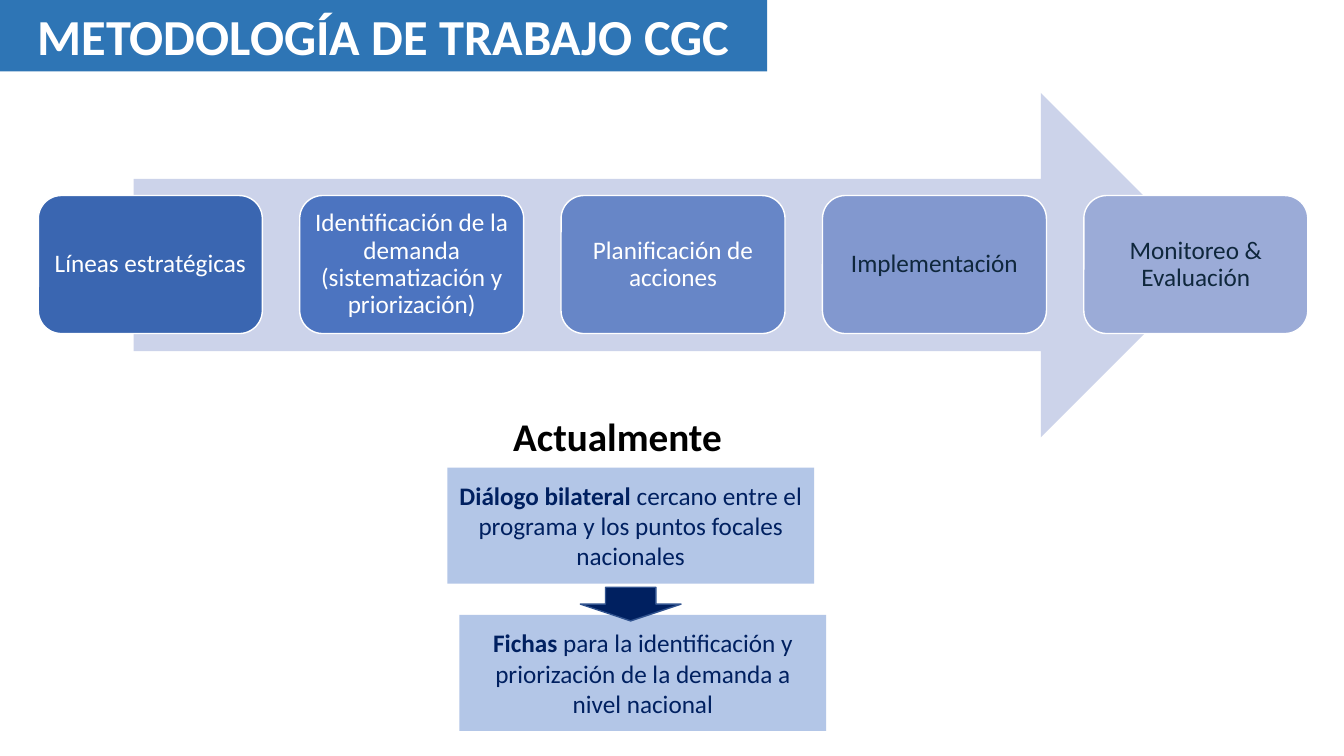
from dataclasses import dataclass

from pptx import Presentation
from pptx.dml.color import RGBColor
from pptx.enum.shapes import MSO_SHAPE
from pptx.enum.text import MSO_ANCHOR, MSO_AUTO_SIZE, PP_ALIGN
from pptx.util import Pt

RECTANGLE = MSO_SHAPE.RECTANGLE
ROUNDED = MSO_SHAPE.ROUNDED_RECTANGLE
RIGHT_ARROW = MSO_SHAPE.RIGHT_ARROW
DOWN_ARROW = MSO_SHAPE.DOWN_ARROW
TOP = MSO_ANCHOR.TOP
MIDDLE = MSO_ANCHOR.MIDDLE
NO_AUTOFIT = MSO_AUTO_SIZE.NONE
CENTER = PP_ALIGN.CENTER

TITLE_ONLY = 5
FONT = "Calibri"
COLORS = {
    "banner": "2E75B5",
    "process": "CCD3EA",
    "strategy": "3A66B1",
    "demand": "4C74C0",
    "planning": "6786C7",
    "implementation": "8298CF",
    "monitoring": "9BABD7",
    "note": "B3C6E7",
    "navy": "002060",
    "navy_edge": "31538F",
    "white": "FFFFFF",
    "black": "000000",
    "dark": "0F273C",
}


@dataclass(frozen=True)
class Box:
    left: float
    top: float
    width: float
    height: float

    def lengths(self) -> list:
        return [Pt(v) for v in (self.left, self.top, self.width, self.height)]


@dataclass(frozen=True)
class Stage:
    text: str
    fill: str
    ink: str


@dataclass(frozen=True)
class Note:
    box: Box
    lead: str
    rest: str


STAGES = [
    Stage("Líneas estratégicas", "strategy", "white"),
    Stage("Identificación de la demanda (sistematización y priorización)", "demand", "white"),
    Stage("Planificación de acciones", "planning", "white"),
    Stage("Implementación", "implementation", "dark"),
    Stage("Monitoreo & Evaluación", "monitoring", "dark"),
]
FIRST_STAGE = Box(27.4, 139.7, 160, 98.6)
STAGE_PITCH = 186.7

NOTES = [
    Note(Box(319.5, 334, 262, 83), "Diálogo bilateral ",
         "cercano entre el programa y los puntos focales nacionales"),
    Note(Box(328.2, 439.2, 262, 83), "Fichas",
         " para la identificación y priorización de la demanda a nivel nacional"),
]


def rgb(color: str) -> RGBColor:
    return RGBColor.from_string(COLORS[color])


def paint(shape, fill: str, edge: str = "") -> None:
    shape.fill.solid()
    shape.fill.fore_color.rgb = rgb(fill)
    if edge:
        shape.line.color.rgb = rgb(edge)
        shape.line.width = Pt(1)
    else:
        shape.line.fill.background()


def add_figure(slide, kind, box: Box, fill: str, edge: str = ""):
    figure = slide.shapes.add_shape(kind, *box.lengths())
    figure.shadow.inherit = False
    paint(figure, fill, edge)
    return figure


def write(shape, runs: list[tuple[str, bool]], size: float, ink: str,
          anchor=MIDDLE, spacing: float = 1.0, inset: tuple[float, float] = (7.2, 3.6)) -> None:
    frame = shape.text_frame
    side, edge = map(Pt, inset)
    frame_format = {
        "word_wrap": True, "auto_size": NO_AUTOFIT, "vertical_anchor": anchor,
        "margin_left": side, "margin_right": side,
        "margin_top": edge, "margin_bottom": edge,
    }
    for name, value in frame_format.items():
        setattr(frame, name, value)
    paragraph = frame.paragraphs[0]
    paragraph.alignment = CENTER
    paragraph.line_spacing = spacing
    for text, bold in runs:
        run = paragraph.add_run()
        run.text = text
        for name, value in {"name": FONT, "size": Pt(size), "bold": bold}.items():
            setattr(run.font, name, value)
        run.font.color.rgb = rgb(ink)


def place_title(slide) -> None:
    title = slide.shapes.title
    position = zip(("left", "top", "width", "height"), Box(0, 0, 548, 51).lengths())
    for name, value in position:
        setattr(title, name, value)
    paint(title, "banner")
    write(title, [("METODOLOGÍA DE TRABAJO CGC", True)], 36, "white", TOP)


def draw_process(slide) -> None:
    add_figure(slide, RIGHT_ARROW, Box(95.4, 66.4, 771, 246), "process")
    for index, stage in enumerate(STAGES):
        box = Box(FIRST_STAGE.left + index * STAGE_PITCH, FIRST_STAGE.top,
                  FIRST_STAGE.width, FIRST_STAGE.height)
        step = add_figure(slide, ROUNDED, box, stage.fill, "white")
        write(step, [(stage.text, False)], 18, stage.ink, spacing=0.9, inset=(5, 5))


def draw_current_practice(slide) -> None:
    heading = slide.shapes.add_textbox(*Box(334.6, 291, 213, 41).lengths())
    write(heading, [("Actualmente", True)], 28, "black", TOP)
    for note in NOTES:
        panel = add_figure(slide, RECTANGLE, note.box, "note")
        write(panel, [(note.lead, True), (note.rest, False)], 18, "navy")
    add_figure(slide, DOWN_ARROW, Box(414.5, 419.5, 72, 24), "navy", "navy_edge")


def main() -> None:
    deck = Presentation()
    deck.slide_width, deck.slide_height = Pt(960), Pt(540)
    slide = deck.slides.add_slide(deck.slide_layouts[TITLE_ONLY])
    place_title(slide)
    draw_process(slide)
    draw_current_practice(slide)
    deck.save("out.pptx")


if __name__ == "__main__":
    main()
